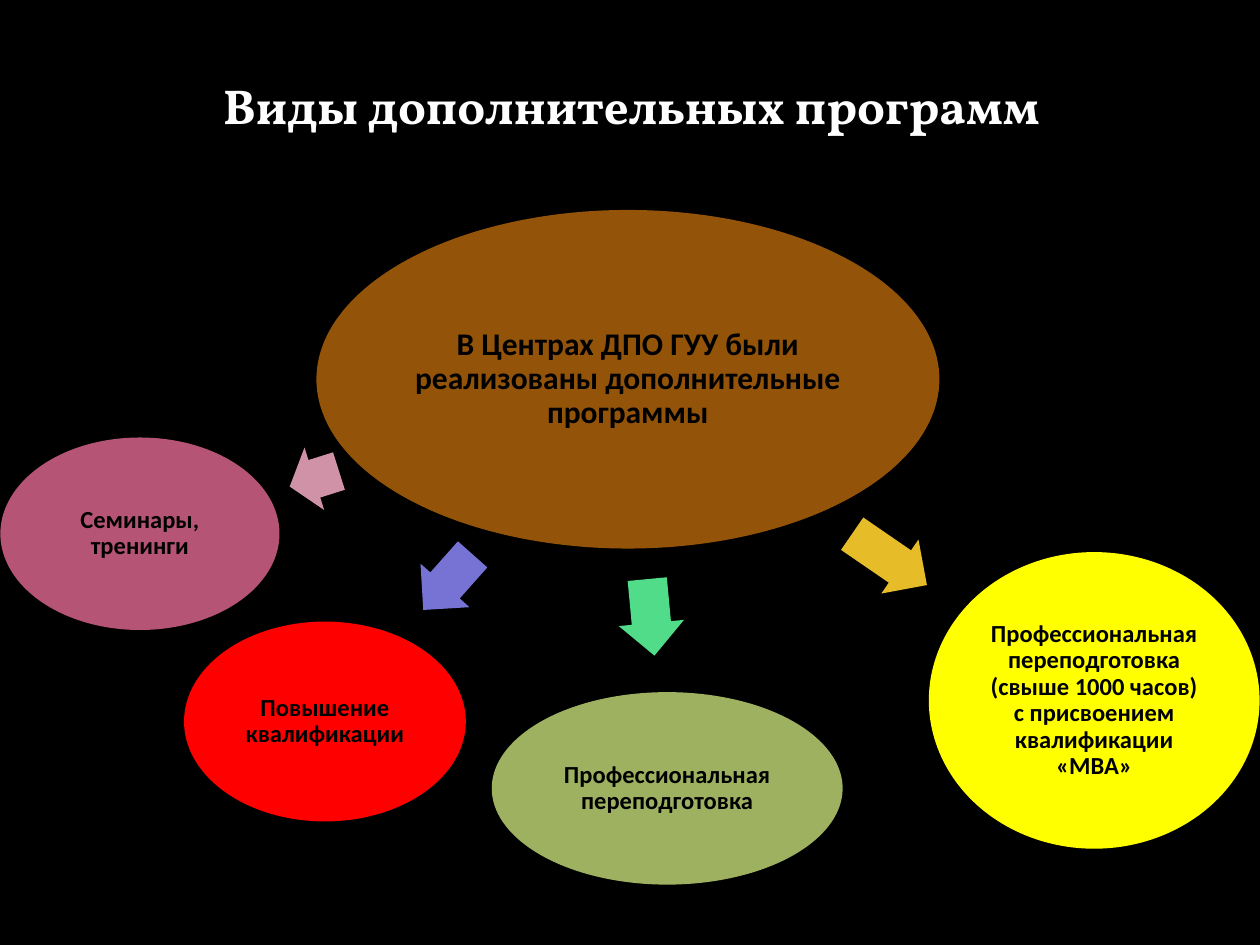
from pptx import Presentation
from pptx.dml.color import RGBColor
from pptx.enum import shapes, text
from pptx.util import Pt

COLORS = {
    "background": "000000", "title": "FFFFFF", "label": "000000",
    "center": "93540A", "mba": "FFFF00", "retraining": "9EB160",
    "advanced": "FF0000", "seminars": "B55475",
    "mba arrow": "E7BC29", "retraining arrow": "50DC88",
    "advanced arrow": "7673D4", "seminars arrow": "D092A7",
}

ELLIPSES = [
    ("center", 180.8, 120, 356, 193.5, 18, 2.2,
     "В Центрах ДПО ГУУ были реализованы дополнительные программы"),
    ("mba", 530.8, 315.5, 189, 169.5, 14, 1.5,
     "Профессиональная переподготовка (свыше 1000 часов)\vс присвоением квалификации «MBA»"),
    ("retraining", 281, 395.5, 200.5, 110, 14, 1.5,
     "Профессиональная переподготовка"),
    ("advanced", 105.2, 355.2, 161, 114.2, 14, 1.5,
     "Повышение квалификации"),
    ("seminars", 0.2, 250, 159.5, 110, 14, 1.5,
     "Семинары, тренинги"),
]

ARROWS = [
    ("mba arrow", 482.4, 300.96, 51.84, 34.5),
    ("retraining arrow", 349.92, 334.08, 43.92, 84.6),
    ("advanced arrow", 234.72, 313.92, 42.48, 131.6),
    ("seminars arrow", 164.88, 254.88, 29.52, 162.5),
]
ARROW_HEIGHT = 37.44

presentation = Presentation()
presentation.slide_width = Pt(720)
presentation.slide_height = Pt(540)
slide = presentation.slides.add_slide(presentation.slide_layouts[6])
slide.background.fill.solid()
slide.background.fill.fore_color.rgb = RGBColor.from_string(COLORS["background"])


def add_filled(kind, color, left, top, width, height):
    shape = slide.shapes.add_shape(kind, Pt(left), Pt(top), Pt(width), Pt(height))
    shape.shadow.inherit = False
    shape.fill.solid()
    shape.fill.fore_color.rgb = RGBColor.from_string(COLORS[color])
    shape.line.fill.background()
    return shape


def write(frame, words, font_name, size, color, anchor):
    frame.word_wrap = True
    frame.vertical_anchor = anchor
    paragraph = frame.paragraphs[0]
    paragraph.text = words
    paragraph.alignment = text.PP_ALIGN.CENTER
    paragraph.font.name = font_name
    paragraph.font.size = Pt(size)
    paragraph.font.bold = True
    paragraph.font.color.rgb = RGBColor.from_string(COLORS[color])
    return paragraph


for color, left, top, width, height, size, inset, words in ELLIPSES:
    ellipse = add_filled(shapes.MSO_SHAPE.OVAL, color, left, top, width, height)
    frame = ellipse.text_frame
    frame.margin_left = frame.margin_right = Pt(inset)
    frame.margin_top = frame.margin_bottom = Pt(inset)
    paragraph = write(frame, words, "Calibri", size, "label", text.MSO_ANCHOR.MIDDLE)
    paragraph.line_spacing = 0.9

for color, left, top, width, angle in ARROWS:
    arrow = add_filled(shapes.MSO_SHAPE.RIGHT_ARROW, color, left, top, width, ARROW_HEIGHT)
    arrow.adjustments[0] = 0.6
    arrow.adjustments[1] = 0.5
    arrow.rotation = angle

title = slide.shapes.add_textbox(Pt(36.7), Pt(26.4), Pt(648), Pt(54))
write(title.text_frame, "Виды дополнительных программ", "Vollkorn", 28, "title",
      text.MSO_ANCHOR.BOTTOM)

presentation.save("out.pptx")
